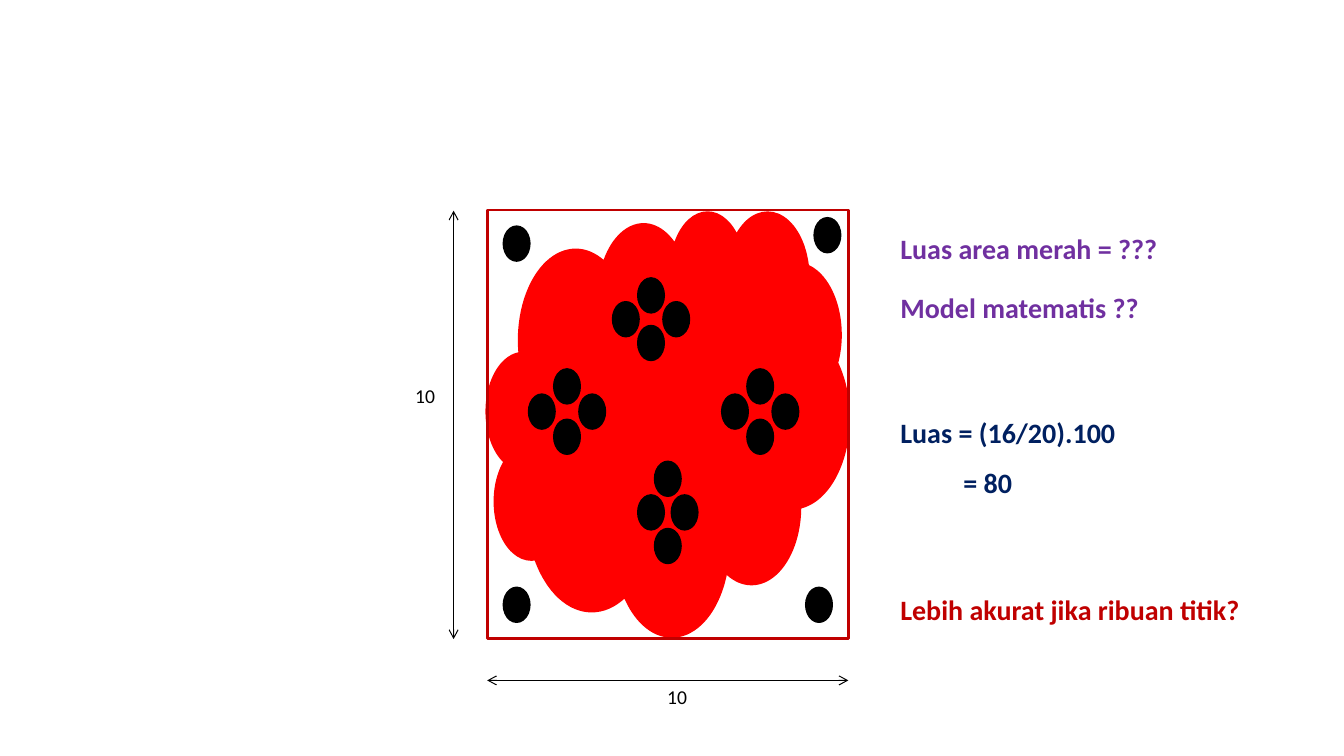
import pptx
import pptx.dml.color
import pptx.enum.shapes
import pptx.enum.text
import pptx.oxml.ns
import pptx.util
from lxml import etree

Pt = pptx.util.Pt
qn = pptx.oxml.ns.qn
SHAPES = pptx.enum.shapes.MSO_SHAPE

BLACK = "000000"
RED = "FF0000"
DARK_RED = "C00000"
PURPLE = "7030A0"
NAVY = "002060"

TEXT_LEFT = 636
DOT_WIDTH, DOT_HEIGHT = 18, 24
# Left and top of the dot position at the middle, then the offsets around it
CLUSTERS = [(396, 282, 18, 18), (534, 282, 18, 18), (468, 354, 12, 24), (456, 216, 18, 17)]
CORNER_DOTS = [(576, 420), (582, 156), (360, 162), (360, 420)]


def color(hex_string):
    return pptx.dml.color.RGBColor.from_string(hex_string)


def add_figure(shapes, kind, left, top, width, height, fill, line):
    shape = shapes.add_shape(kind, Pt(left), Pt(top), Pt(width), Pt(height))
    shape.shadow.inherit = False
    if fill:
        shape.fill.solid()
        shape.fill.fore_color.rgb = color(fill)
    else:
        shape.fill.background()
    shape.line.color.rgb = color(line)
    shape.line.width = Pt(2)


def add_dot(shapes, left, top):
    add_figure(shapes, SHAPES.OVAL, left, top, DOT_WIDTH, DOT_HEIGHT, BLACK, BLACK)


def add_cluster(shapes, left, top, across, down):
    """Place four dots in a diamond."""
    for step_x, step_y in [(-1, 0), (0, -1), (1, 0), (0, 1)]:
        add_dot(shapes, left + step_x * across, top + step_y * down)


def add_text(shapes, lines, left, top, width, height, size, hex_color,
             bold=False, spacing=1.0, wrap=True):
    """Write (text, left indent) lines in one text box."""
    box = shapes.add_textbox(Pt(left), Pt(top), Pt(width), Pt(height))
    frame = box.text_frame
    frame.word_wrap = wrap
    frame.auto_size = pptx.enum.text.MSO_AUTO_SIZE.SHAPE_TO_FIT_TEXT
    for index, (text, indent) in enumerate(lines):
        paragraph = frame.add_paragraph() if index else frame.paragraphs[0]
        paragraph.line_spacing = spacing
        if indent:
            paragraph._p.get_or_add_pPr().set("marL", str(Pt(indent)))
        run = paragraph.add_run()
        run.text = text
        run.font.name = "Calibri"
        run.font.size = Pt(size)
        run.font.bold = bold
        run.font.color.rgb = color(hex_color)


def add_statement(shapes, lines, top, width, height, hex_color):
    add_text(shapes, lines, TEXT_LEFT, top, width, height, 20, hex_color, bold=True, spacing=1.5)


def add_dimension(slide, label, label_left, label_top, start, end):
    """Group a double-headed arrow with its length."""
    shapes = slide.shapes.add_group_shape().shapes
    add_text(shapes, [(label, 0)], label_left, label_top, 29, 24.5, 14, BLACK, wrap=False)
    arrow = shapes.add_connector(pptx.enum.shapes.MSO_CONNECTOR.STRAIGHT,
                                 *[Pt(value) for value in start + end])
    arrow.line.color.rgb = color(BLACK)
    arrow.line.width = Pt(0.75)
    line = arrow.line._get_or_add_ln()
    for tag in ("a:headEnd", "a:tailEnd"):
        etree.SubElement(line, qn(tag)).set("type", "arrow")
    etree.SubElement(arrow._element.spPr, qn("a:effectLst"))


def main():
    presentation = pptx.Presentation()
    presentation.slide_width = Pt(960)
    presentation.slide_height = Pt(540)
    slide = presentation.slides.add_slide(presentation.slide_layouts[6])
    shapes = slide.shapes

    add_figure(shapes, SHAPES.CLOUD, 348, 151, 258, 302.5, RED, RED)
    add_figure(shapes, SHAPES.RECTANGLE, 348, 150, 258, 306, None, DARK_RED)
    for cluster in CLUSTERS:
        add_cluster(shapes, *cluster)
    for left, top in CORNER_DOTS:
        add_dot(shapes, left, top)

    add_statement(shapes, [("Luas area merah = ???", 0)], 150, 248, 44, PURPLE)
    add_statement(shapes, [("Model matematis ??", 0)], 192, 192, 44, PURPLE)
    add_statement(shapes, [("Luas = (16/20).100", 0), ("= 80", 45)], 281, 192, 80, NAVY)
    add_statement(shapes, [("Lebih akurat jika ribuan titik?", 0)], 407.5, 276.5, 44, DARK_RED)

    add_dimension(slide, "10", 289.5, 271, (324, 150.5), (324, 456.5))
    add_dimension(slide, "10", 469.5, 486, (606, 486), (348, 486))
    presentation.save("out.pptx")


if __name__ == "__main__":
    main()
